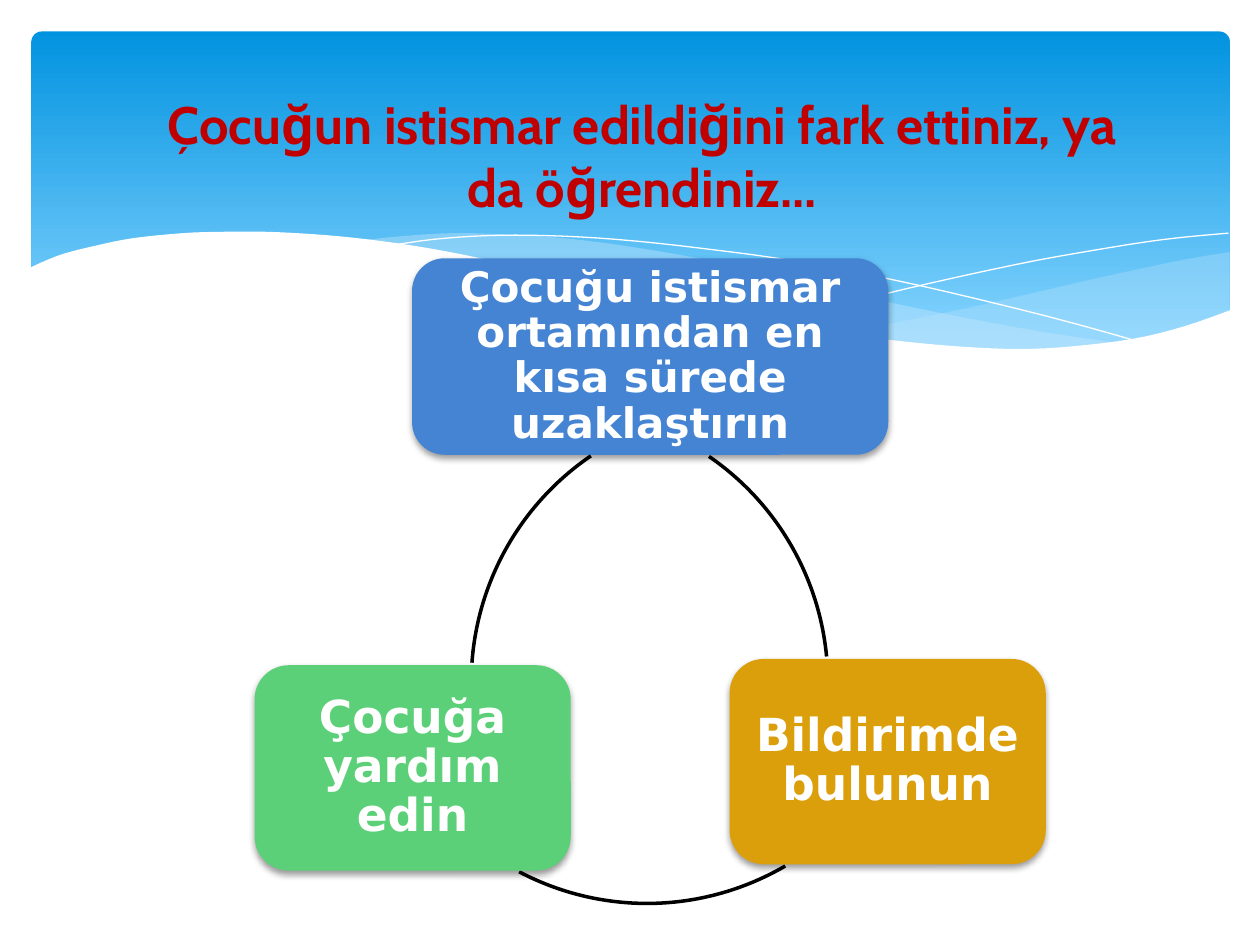
from lxml import etree
from pptx import Presentation
from pptx.dml.color import RGBColor
from pptx.enum.shapes import MSO_SHAPE
from pptx.enum.text import MSO_ANCHOR, PP_ALIGN
from pptx.oxml.ns import qn
from pptx.util import Inches, Pt

ROUNDED = MSO_SHAPE.ROUNDED_RECTANGLE
ARC = MSO_SHAPE.ARC
MIDDLE = MSO_ANCHOR.MIDDLE
CENTER = PP_ALIGN.CENTER

COLORS = {
    "sky_top": "0293E0", "sky_bottom": "83D3FE", "mist": "C6E7FC",
    "white": "FFFFFF", "black": "000000", "title": "C00000",
    "blue": "4584D3", "amber": "DC9F0C", "green": "5BD078",
}

RIGHT_MIST = [
    [(9.76, 2), (9.35, 2.07), (8.61, 2.23), (7.79, 2.42), (7.06, 2.57), (6.61, 2.65)],
    [(6.61, 2.65), (7.05, 2.71), (7.57, 2.76), (8.14, 2.78), (8.72, 2.74),
     (9.21, 2.65), (9.49, 2.57), (9.76, 2.47)],
]
LEFT_MIST = [
    [(8.93, 2.73), (8.37, 2.65), (7.75, 2.54), (7.06, 2.4), (6.29, 2.22), (5.69, 2.08),
     (5.14, 1.98), (4.65, 1.91), (4.2, 1.87), (3.61, 1.85), (3.13, 1.88), (2.86, 1.91)],
    [(2.86, 1.91), (3.42, 1.99), (4.04, 2.11), (4.49, 2.22), (5.3, 2.4), (6.01, 2.55),
     (6.65, 2.66), (7.22, 2.74), (7.73, 2.77), (8.18, 2.78), (8.57, 2.77), (8.93, 2.73)],
]
FALLING_LINE = [
    [(3.09, 1.95), (3.44, 1.9), (3.87, 1.87), (4.33, 1.87), (4.89, 1.9), (5.56, 1.97),
     (6.36, 2.08), (7.27, 2.26), (8.31, 2.51), (9.07, 2.72)],
]
RISING_LINE = [
    [(6.13, 2.57), (6.53, 2.46), (7.2, 2.29), (8.06, 2.1), (8.66, 1.99), (9.24, 1.9),
     (9.75, 1.85)],
]
WHITE_WAVE = [
    [(9.77, 2.46), (9.4, 2.59), (8.99, 2.69), (8.5, 2.75), (8.09, 2.77), (7.61, 2.75),
     (7.08, 2.7), (6.48, 2.62), (5.79, 2.5), (5.03, 2.33), (4.47, 2.2), (3.91, 2.07),
     (3.4, 1.97), (2.92, 1.9), (2.5, 1.86), (2.11, 1.84), (1.77, 1.84), (1.46, 1.85),
     (1.06, 1.89), (0.76, 1.95), (0.52, 2.01), (0.36, 2.07), (0.23, 2.13)],
    [(0.23, 3.29), (9.77, 3.29)],
]


def rgb(name):
    """Return the named palette colour."""
    return RGBColor.from_string(COLORS[name])


def smooth(knots, steps=4):
    """Return points on a Catmull-Rom curve through the knots."""
    if len(knots) < 3:
        return knots
    padded = [knots[0], *knots, knots[-1]]
    points = []
    for a, b, c, d in zip(padded, padded[1:], padded[2:], padded[3:]):
        for step in range(steps):
            t = step / steps
            points.append(tuple(
                q + t / 2 * (r - p + t * (2 * p - 5 * q + 4 * r - s + t * (3 * (q - r) + s - p)))
                for p, q, r, s in zip(a, b, c, d)))
    return points + [knots[-1]]


def write_text(shape, text, *, size, font, color, inset=(0.1, 0.05), spacing=1.0):
    """Write bold, centred text into a shape."""
    frame = shape.text_frame
    frame.word_wrap = True
    frame.vertical_anchor = MIDDLE
    frame.margin_left = frame.margin_right = Inches(inset[0])
    frame.margin_top = frame.margin_bottom = Inches(inset[1])
    paragraph = frame.paragraphs[0]
    paragraph.alignment = CENTER
    paragraph.line_spacing = spacing
    run = paragraph.add_run()
    run.text = text
    run.font.size = Pt(size)
    run.font.name = font
    run.font.bold = True
    run.font.color.rgb = rgb(color)


class SlideBuilder:
    """Draws styled elements on the current slide."""

    title_font = "Cabin"
    body_font = "DejaVu Sans"

    def __init__(self, slide):
        """Keep the slide to draw on."""
        self.slide = slide

    def add_preset(self, preset, box):
        """Add a plain preset shape without a shadow."""
        shape = self.slide.shapes.add_shape(preset, *map(Inches, box))
        shape.shadow.inherit = False
        return shape

    def add_sky(self, box):
        """Add the gradient panel behind the title."""
        shape = self.add_preset(ROUNDED, box)
        shape.adjustments[0] = 0.03
        shape.line.fill.background()
        shape.fill.gradient()
        shape.fill.gradient_angle = 270
        stops = zip(shape.fill.gradient_stops, (0, 0.9), ("sky_top", "sky_bottom"))
        for stop, position, color in stops:
            stop.position = position
            stop.color.rgb = rgb(color)

    def add_wave(self, edges, fill=None, opacity=100):
        """Add a filled wave, or a white hairline when no fill is given."""
        points = [(Inches(x), Inches(y)) for edge in edges for x, y in smooth(edge)]
        builder = self.slide.shapes.build_freeform(*points[0])
        builder.add_line_segments(points[1:], close=fill is not None)
        shape = builder.convert_to_shape()
        shape.shadow.inherit = False
        if fill is None:
            shape.fill.background()
            shape.line.color.rgb = rgb("white")
            shape.line.width = Pt(0)
            return
        shape.line.fill.background()
        shape.fill.solid()
        shape.fill.fore_color.rgb = rgb(fill)
        if opacity < 100:
            color = shape._element.spPr.find(qn("a:solidFill")).find(qn("a:srgbClr"))
            etree.SubElement(color, qn("a:alpha"), val=str(opacity * 1000))

    def add_title(self, text, box):
        """Add the slide heading."""
        shape = self.slide.shapes.add_textbox(*map(Inches, box))
        write_text(shape, text, size=30, font=self.title_font, color="title")

    def add_step(self, text, box, fill, size, inset):
        """Add a rounded step box with a soft shadow."""
        shape = self.add_preset(ROUNDED, box)
        shape.fill.solid()
        shape.fill.fore_color.rgb = rgb(fill)
        shape.line.fill.background()
        effects = shape._element.spPr.find(qn("a:effectLst"))
        shadow = etree.SubElement(
            effects, qn("a:outerShdw"), blurRad=str(Pt(4)), dist=str(Pt(2)),
            dir="5400000", rotWithShape="0")
        color = etree.SubElement(shadow, qn("a:srgbClr"), val=COLORS["black"])
        etree.SubElement(color, qn("a:alpha"), val="38000")
        write_text(shape, text, size=size, font=self.body_font, color="white",
                   inset=(inset, inset), spacing=0.9)

    def add_arc(self, left, top, start, end, diameter=4.35):
        """Add a circular arc between two clockwise angles from 0 to 360 degrees."""
        shape = self.add_preset(ARC, (left, top, diameter, diameter))
        shape.adjustments[0] = start * 0.6
        shape.adjustments[1] = end * 0.6
        shape.fill.background()
        shape.line.color.rgb = rgb("black")
        shape.line.width = Pt(2)


def main():
    """Build and save the slide."""
    presentation = Presentation()
    presentation.slide_width = Inches(10)
    presentation.slide_height = Inches(7.5)
    builder = SlideBuilder(presentation.slides.add_slide(presentation.slide_layouts[6]))

    builder.add_sky((0.25, 0.25, 9.51, 2.7))
    builder.add_wave(RIGHT_MIST, "mist", 29)
    builder.add_wave(LEFT_MIST, "mist", 40)
    builder.add_wave(FALLING_LINE)
    builder.add_wave(RISING_LINE)
    builder.add_wave(WHITE_WAVE, "white")
    builder.add_title("Çocuğun istismar edildiğini fark ettiniz, ya da öğrendiniz...",
                      (0.98, 0.68, 8.24, 1.1))

    builder.add_step("Çocuğu istismar ortamından en kısa sürede uzaklaştırın",
                     (3.27, 2.05, 3.78, 1.56), "blue", 24, 0.1)
    builder.add_arc(2.22, 3.24, 304.5, 354.6)
    builder.add_step("Bildirimde bulunun", (5.79, 5.23, 2.51, 1.63), "amber", 26, 0.11)
    builder.add_arc(2.96, 2.82, 59.7, 117.8)
    builder.add_step("Çocuğa yardım edin", (2.02, 5.28, 2.51, 1.63), "green", 26, 0.11)
    builder.add_arc(3.74, 3.24, 184.1, 235.7)

    presentation.save("out.pptx")


if __name__ == "__main__":
    main()
